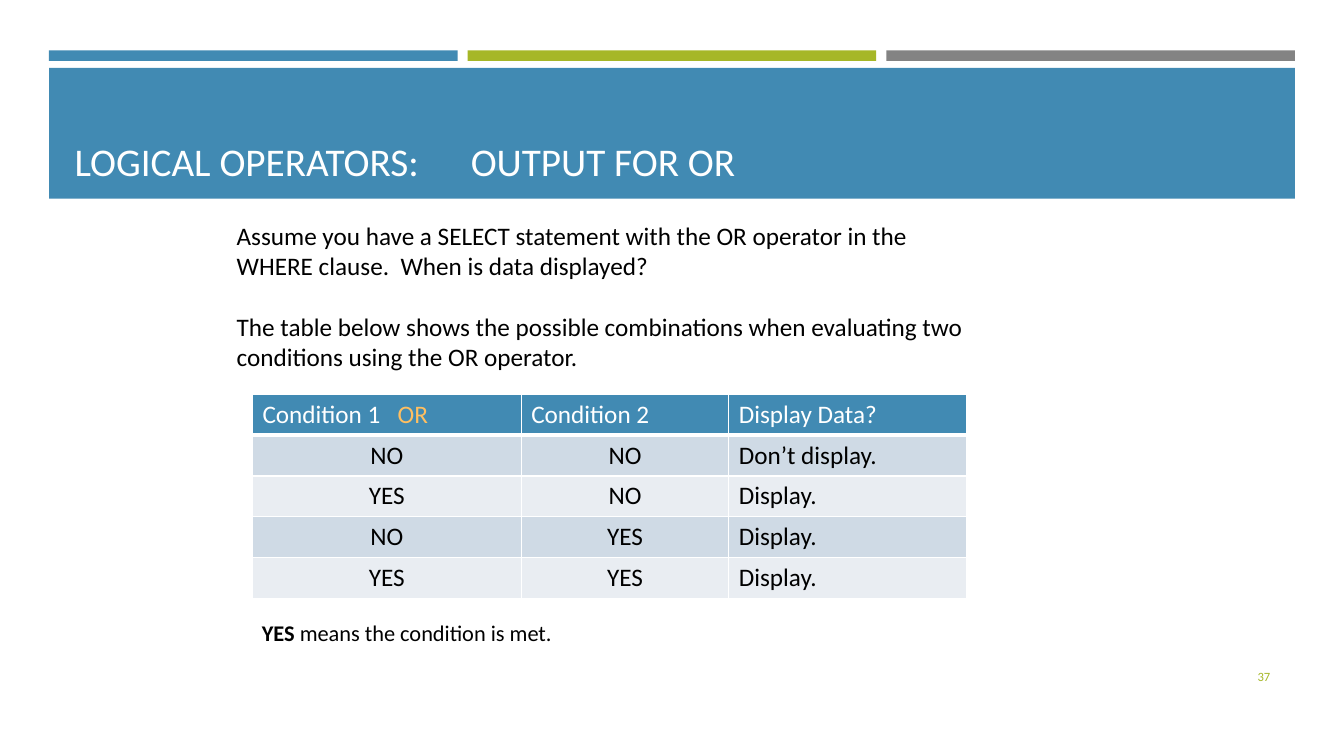
from lxml.etree import SubElement
from pptx import Presentation
from pptx.dml.color import RGBColor
from pptx.enum.shapes import MSO_SHAPE
from pptx.enum.text import MSO_ANCHOR, PP_ALIGN
from pptx.oxml.ns import qn
from pptx.util import Pt

BLUE = RGBColor(0x41, 0x8A, 0xB3)
GREEN = RGBColor(0xA6, 0xB7, 0x27)
GRAY = RGBColor(0x83, 0x83, 0x83)
ORANGE = RGBColor(0xFF, 0xBF, 0x61)
DARK = RGBColor(0xCF, 0xDA, 0xE5)
LIGHT = RGBColor(0xE9, 0xED, 0xF2)
WHITE = RGBColor(0xFF, 0xFF, 0xFF)
BLACK = RGBColor(0, 0, 0)

ROWS = [
    ("Condition 1\t", "Condition 2", "Display Data?"),
    ("NO", "NO", "Don’t display."),
    ("YES", "NO", "Display."),
    ("NO", "YES", "Display."),
    ("YES", "YES", "Display."),
]
INTRO = [
    "Assume you have a SELECT statement with the OR operator in the "
    "WHERE clause.  When is data displayed?",
    "The table below shows the possible combinations when evaluating two "
    "conditions using the OR operator.",
]


def add_run(para, text, size, color, bold=False):
    """Append a formatted run to a paragraph."""
    run = para.add_run()
    run.text = text
    font = run.font
    font.name, font.size, font.bold = "Calibri", Pt(size), bold
    font.color.rgb = color


def set_tab(para, pos):
    """Give a paragraph one left tab stop."""
    tabs = SubElement(para._p.get_or_add_pPr(), qn("a:tabLst"))
    SubElement(tabs, qn("a:tab"), pos=str(Pt(pos)), algn="l")


def add_rect(slide, left, top, width, height, color):
    """Draw a plain filled rectangle."""
    rect = slide.shapes.add_shape(
        MSO_SHAPE.RECTANGLE, Pt(left), Pt(top), Pt(width), Pt(height))
    rect.shadow.inherit = False
    rect.fill.solid()
    rect.fill.fore_color.rgb = color
    rect.line.fill.background()


def add_box(slide, left, top, width, height, anchor=MSO_ANCHOR.TOP):
    """Add a wrapping text box and return its frame."""
    box = slide.shapes.add_textbox(Pt(left), Pt(top), Pt(width), Pt(height))
    frame = box.text_frame
    frame.word_wrap = True
    frame.vertical_anchor = anchor
    return frame


def add_header(slide, left, top, width):
    """Draw the three bars and the title banner."""
    gap = 7.2
    bar = (width - 2 * gap) / 3
    for i, color in enumerate((BLUE, GREEN, GRAY)):
        add_rect(slide, left + i * (bar + gap), top, bar, 7.5, color)
    add_rect(slide, left, top + 12.5, width, 93.5, BLUE)
    frame = add_box(slide, left + 11.2, top + 19.5, width - 22.4, 80,
                    MSO_ANCHOR.BOTTOM)
    para = frame.paragraphs[0]
    set_tab(para, 283)
    add_run(para, "LOGICAL OPERATORS:\tOUTPUT FOR OR", 28, WHITE)


def add_intro(slide, left, top, width, height):
    """Write the two opening paragraphs."""
    frame = add_box(slide, left, top, width, height)
    for i, text in enumerate(INTRO):
        para = frame.add_paragraph() if i else frame.paragraphs[0]
        para.space_before = Pt(22 * i)
        add_run(para, text, 18, BLACK)


def add_borders(cell, low):
    """Draw white cell borders with the given bottom width."""
    props = cell._tc.get_or_add_tcPr()
    for side, width in zip("LRTB", (1, 1, 1, low)):
        line = SubElement(props, qn("a:ln" + side), w=str(Pt(width)))
        fill = SubElement(line, qn("a:solidFill"))
        SubElement(fill, qn("a:srgbClr"), val=str(WHITE))


def add_truth(slide, left, top, widths, height):
    """Build the truth table for OR."""
    table = slide.shapes.add_table(
        len(ROWS), len(widths), Pt(left), Pt(top),
        Pt(sum(widths)), Pt(height * len(ROWS))).table
    for col, width in zip(table.columns, widths):
        col.width = Pt(width)
    for r, texts in enumerate(ROWS):
        table.rows[r].height = Pt(height)
        for c, text in enumerate(texts):
            cell = table.cell(r, c)
            add_borders(cell, 1 if r else 3)
            cell.fill.solid()
            cell.fill.fore_color.rgb = (DARK if r % 2 else LIGHT) if r else BLUE
            para = cell.text_frame.paragraphs[0]
            if r and c < 2:
                para.alignment = PP_ALIGN.CENTER
            add_run(para, text, 18, BLACK if r else WHITE)
    para = table.cell(0, 0).text_frame.paragraphs[0]
    set_tab(para, 96.5)
    add_run(para, "OR", 18, ORANGE)


def add_note(slide, left, top, width, height):
    """Explain what YES means."""
    para = add_box(slide, left, top, width, height).paragraphs[0]
    add_run(para, "YES", 16, BLACK, True)
    add_run(para, " means the condition is met.", 16, BLACK)


def add_number(slide, left, top, width, height):
    """Write the slide number."""
    frame = add_box(slide, left, top, width, height, MSO_ANCHOR.MIDDLE)
    para = frame.paragraphs[0]
    para.alignment = PP_ALIGN.RIGHT
    add_run(para, "37", 9, GREEN)


def main():
    """Build and save the slide."""
    deck = Presentation()
    deck.slide_width, deck.slide_height = Pt(960), Pt(540)
    slide = deck.slides.add_slide(deck.slide_layouts[6])
    add_header(slide, 35, 36, 890)
    add_number(slide, 831.5, 468.5, 83, 29)
    add_truth(slide, 180.3, 281.5, (192, 148.3, 169.7), 29.25)
    add_intro(slide, 162, 153.5, 546, 116.5)
    add_note(slide, 180, 438.5, 498, 26.5)
    deck.save("out.pptx")


if __name__ == "__main__":
    main()
